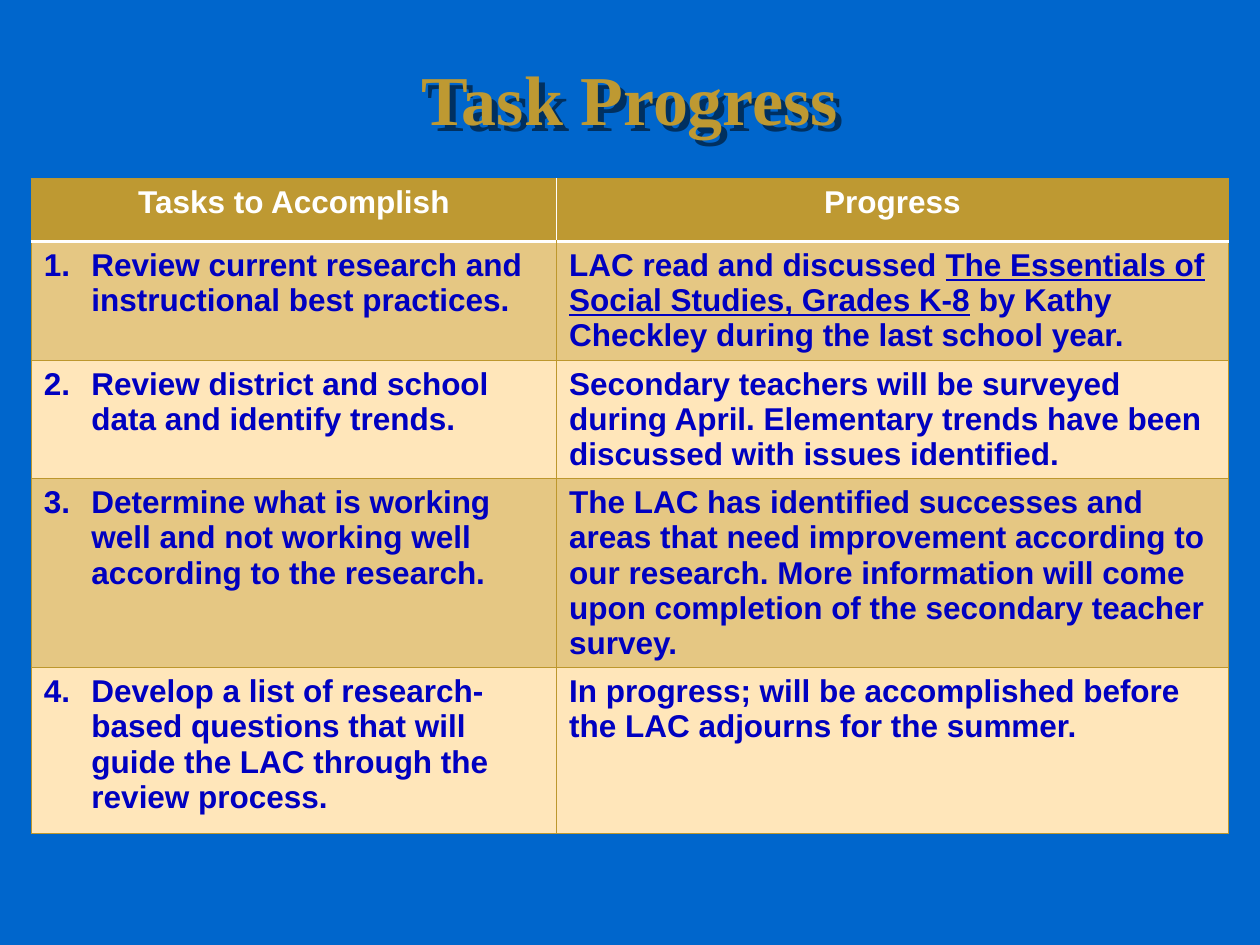
from lxml import etree
from pptx import Presentation
from pptx import util as u
from pptx.dml.color import RGBColor
from pptx.enum import text
from pptx.oxml import ns

BOOK = "The Essentials of Social Studies, Grades K-8"
HEADINGS = ["Tasks to Accomplish", "Progress"]
TASKS = [
    ("Review current research and instructional best practices.",
     ["LAC read and discussed ", BOOK,
      " by Kathy Checkley during the last school year."]),
    ("Review district and school data and identify trends.",
     ["Secondary teachers will be surveyed during April. Elementary trends "
      "have been discussed with issues identified."]),
    ("Determine what is working well and not working well according to the research.",
     ["The LAC has identified successes and areas that need improvement "
      "according to our research. More information will come upon completion "
      "of the secondary teacher survey."]),
    ("Develop a list of research-based questions that will guide the LAC "
     "through the review process.",
     ["In progress; will be accomplished before the LAC adjourns for the summer."]),
]


def color(value):
    return RGBColor.from_string(value)


def add_xml(parent, tag, **attributes):
    return etree.SubElement(parent, ns.qn(tag), attributes)


class Deck:
    BLUE, GOLD, WHITE, INK = "0066CC", "BE9932", "FFFFFF", "0000C0"
    BANDS = ["E5C783", "FFE6BA"]
    SHADOW = "003060"
    BORDER = "BD972D"

    def __init__(self):
        self.prs = Presentation()
        self.prs.slide_width, self.prs.slide_height = u.Cm(25.4), u.Cm(19.05)
        self.s = None

    def add_slide(self):
        self.s = self.prs.slides.add_slide(self.prs.slide_layouts[5])
        fill = self.s.background.fill
        fill.solid()
        fill.fore_color.rgb = color(self.BLUE)

    def style(self, r, size, rgb, font="Arial"):
        r.font.name, r.font.size, r.font.bold = font, u.Pt(size), True
        r.font.color.rgb = color(rgb)

    def title(self, wording, left, top, width, height):
        sp = self.s.shapes.title
        sp.left, sp.top, sp.width, sp.height = map(u.Cm, (left, top, width, height))
        tf = sp.text_frame
        tf.text = wording
        tf.vertical_anchor = text.MSO_ANCHOR.MIDDLE
        p = tf.paragraphs[0]
        p.alignment = text.PP_ALIGN.CENTER
        self.style(p.runs[0], 40, self.GOLD, "Times New Roman")
        effects = add_xml(sp._element.spPr, "a:effectLst")
        shadow = add_xml(effects, "a:outerShdw", dist=str(u.Cm(0.17)),
                         dir="2700000", algn="ctr", rotWithShape="0")
        add_xml(shadow, "a:srgbClr", val=self.SHADOW)

    def table(self, left, top, widths, heights):
        frame = self.s.shapes.add_table(
            len(heights), len(widths), u.Cm(left), u.Cm(top),
            u.Cm(sum(widths)), u.Cm(sum(heights)))
        for column, width in zip(frame.table.columns, widths):
            column.width = u.Cm(width)
        for row, height in zip(frame.table.rows, heights):
            row.height = u.Cm(height)
        return frame.table

    def borders(self, cell, skip="", heavy=""):
        properties = cell._tc.get_or_add_tcPr()
        for side in "LRTB":
            if side in skip:
                continue
            width, rgb = (2, self.WHITE) if side == heavy else (0.75, self.BORDER)
            line = add_xml(properties, f"a:ln{side}", w=str(u.Pt(width)))
            add_xml(add_xml(line, "a:solidFill"), "a:srgbClr", val=rgb)

    def cell(self, cell, parts, rgb, fill, number=None, centered=False):
        p = cell.text_frame.paragraphs[0]
        if centered:
            p.alignment = text.PP_ALIGN.CENTER
        if number:
            properties = p._p.get_or_add_pPr()
            properties.set("marL", str(u.Cm(0.96)))
            properties.set("indent", str(-u.Cm(0.96)))
            add_xml(properties, "a:buFont", typeface="Arial")
            add_xml(properties, "a:buAutoNum", type="arabicPeriod",
                    startAt=str(number))
        for part in parts:
            r = p.add_run()
            r.text = part
            self.style(r, 18, rgb)
            if part == BOOK:
                r.font.underline = True
        cell.fill.solid()
        cell.fill.fore_color.rgb = color(fill)


def main():
    deck = Deck()
    deck.add_slide()
    deck.title("Task Progress", 1.27, 0.76, 22.86, 2.41)
    table = deck.table(0.63, 3.6, [10.59, 13.54], [1.27, 2.39, 2.39, 3.81, 3.35])

    for column, heading in enumerate(HEADINGS):
        cell = table.cell(0, column)
        deck.borders(cell, skip="RL"[column], heavy="B")
        deck.cell(cell, [heading], deck.WHITE, deck.GOLD, centered=True)

    for row, (task, progress) in enumerate(TASKS, 1):
        fill = deck.BANDS[(row - 1) % 2]
        for column, parts in enumerate([[task], progress]):
            cell = table.cell(row, column)
            deck.borders(cell, heavy="T" if row == 1 else "")
            deck.cell(cell, parts, deck.INK, fill, number=None if column else row)

    deck.prs.save("out.pptx")


if __name__ == "__main__":
    main()
